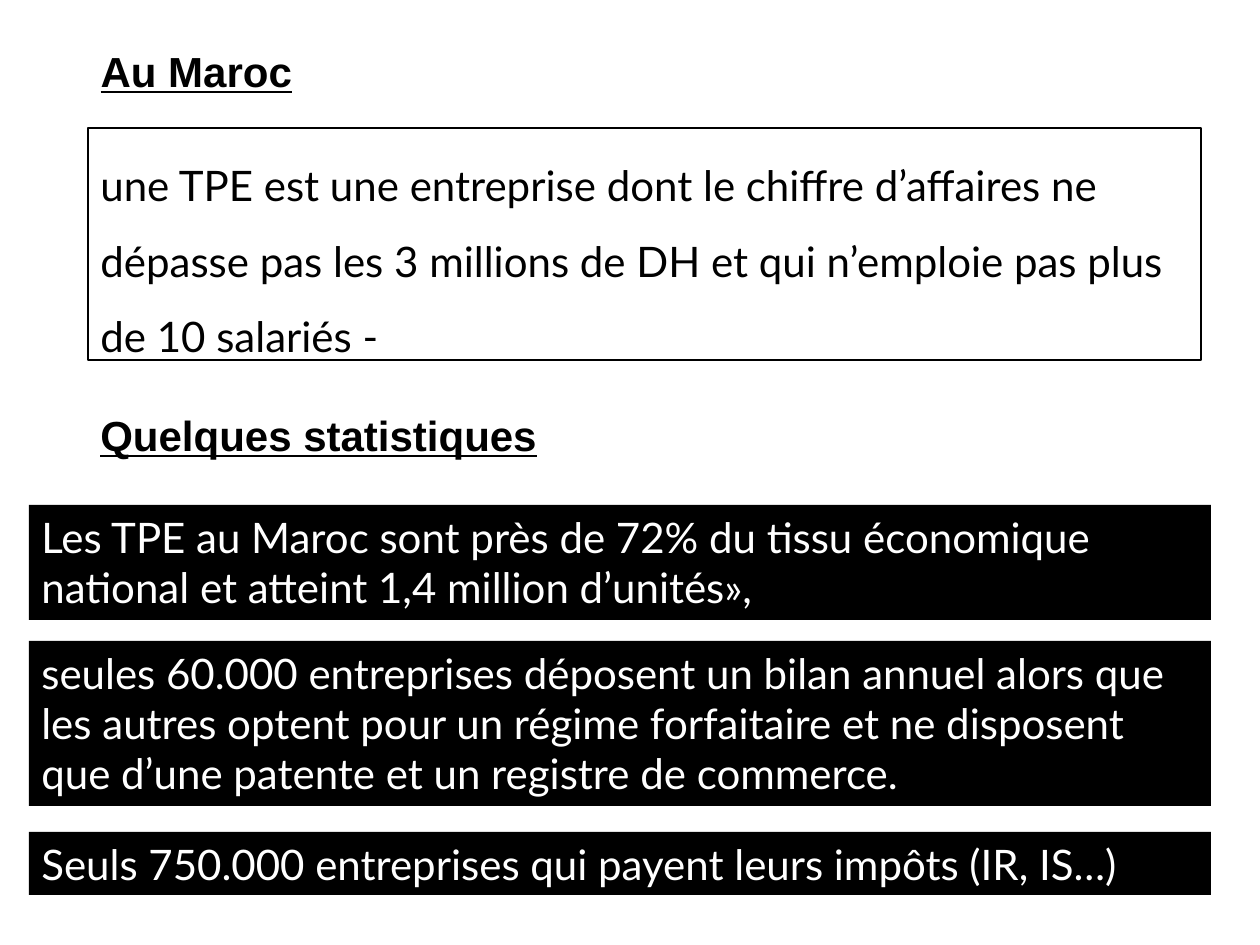
from pptx import Presentation
from pptx import util as u
from pptx.dml.color import RGBColor
from pptx.enum import shapes, text

BLACK = RGBColor(0, 0, 0)
WHITE = RGBColor(255, 255, 255)
PX_PER_INCH = 126


def px(n):
    return u.Emu(round(n * 914400 / PX_PER_INCH))


class SlideBuilder:
    heading_font = "Arial"
    body_font = "Lato"
    size = u.Pt(24)

    def __init__(self, slide):
        self.slide = slide

    def set_text(self, sp, words, font, color, wrap=True, spacing=1.0, heading=False):
        tf = sp.text_frame
        tf.word_wrap = wrap
        tf.auto_size = text.MSO_AUTO_SIZE.SHAPE_TO_FIT_TEXT
        tf.vertical_anchor = text.MSO_ANCHOR.TOP
        p = tf.paragraphs[0]
        p.alignment = text.PP_ALIGN.LEFT
        p.line_spacing = spacing
        r = p.add_run()
        r.text = words
        r.font.name = font
        r.font.size = self.size
        r.font.color.rgb = color
        r.font.bold = heading
        r.font.underline = heading

    def title(self, words, x, y, w, h):
        sp = self.slide.shapes.title
        sp.left, sp.top, sp.width, sp.height = map(px, (x, y, w, h))
        self.set_text(sp, words, self.heading_font, BLACK, wrap=False, heading=True)

    def heading(self, words, x, y, w, h):
        sp = self.slide.shapes.add_textbox(*map(px, (x, y, w, h)))
        self.set_text(sp, words, self.heading_font, BLACK, wrap=False, heading=True)

    def panel(self, words, x, y, w, h, fill, color, line=None, spacing=1.0):
        sp = self.slide.shapes.add_shape(
            shapes.MSO_SHAPE.RECTANGLE, *map(px, (x, y, w, h)))
        sp.shadow.inherit = False
        sp.fill.solid()
        sp.fill.fore_color.rgb = fill
        if line is None:
            sp.line.fill.background()
        else:
            sp.line.color.rgb = line
            sp.line.width = u.Pt(0.75)
        self.set_text(sp, words, self.body_font, color, spacing=spacing)


def main():
    prs = Presentation()
    prs.slide_width, prs.slide_height = u.Inches(10), u.Inches(7.5)
    s = SlideBuilder(prs.slides.add_slide(prs.slide_layouts[5]))

    s.panel("une TPE est une entreprise dont le chiffre d’affaires ne dépasse pas "
            "les 3 millions de DH et qui n’emploie pas plus de 10 salariés -",
            88, 128, 1113, 232, WHITE, BLACK, line=BLACK, spacing=1.5)
    s.title("Au Maroc", 88, 39, 219, 63)
    s.heading("Quelques statistiques", 88, 403, 466, 63)

    statistics = [
        (505, 115, "Les TPE au Maroc sont près de 72% du tissu économique national "
                   "et atteint 1,4 million d’unités»,"),
        (641, 165, "seules 60.000 entreprises déposent un bilan annuel alors que les "
                   "autres optent pour un régime forfaitaire et ne disposent que "
                   "d’une patente et un registre de commerce."),
        (832, 63, "Seuls 750.000 entreprises qui payent leurs impôts (IR, IS…)"),
    ]
    for y, h, words in statistics:
        s.panel(words, 29, y, 1182, h, BLACK, WHITE)

    prs.save("out.pptx")


if __name__ == "__main__":
    main()
